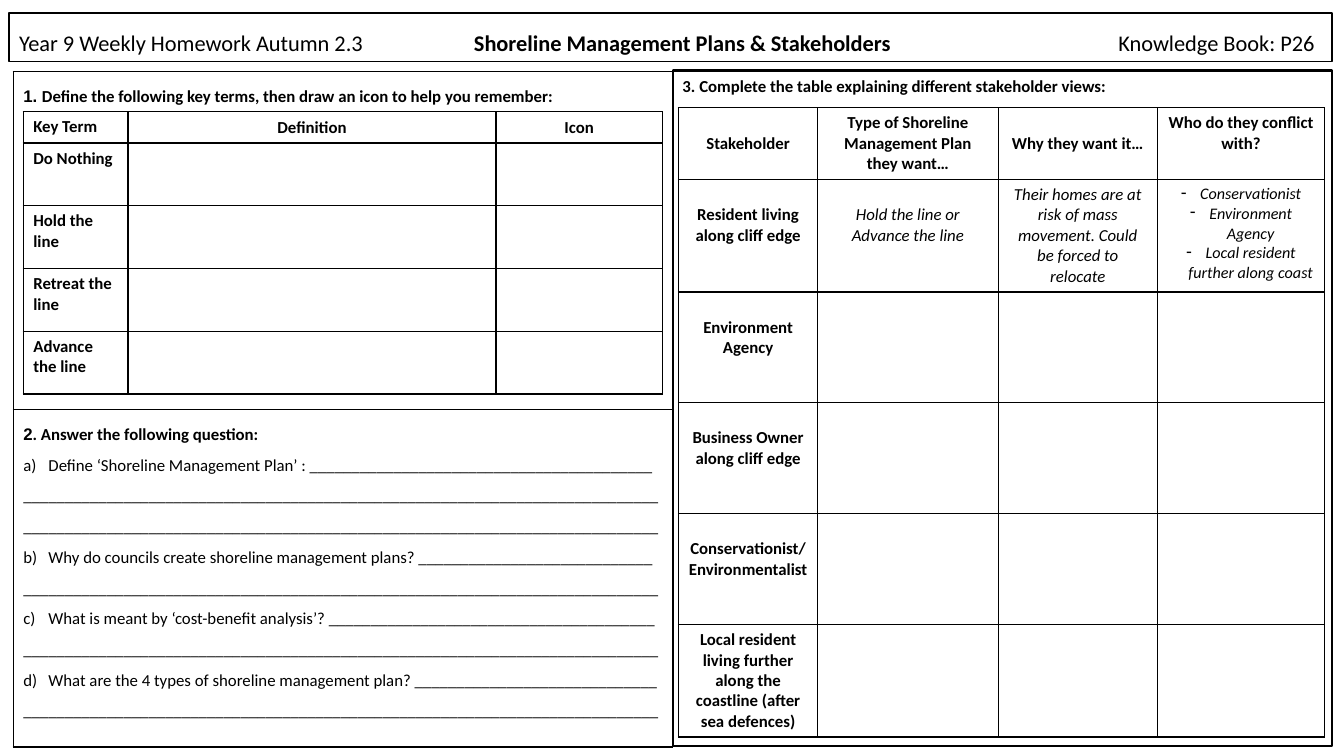
"""Build a homework slide about shoreline management plans and stakeholders."""
from dataclasses import dataclass

from lxml import etree
from pptx import Presentation
from pptx.dml.color import RGBColor
from pptx.enum.shapes import MSO_SHAPE
from pptx.enum.text import MSO_ANCHOR, PP_ALIGN
from pptx.oxml.ns import qn
from pptx.util import Inches, Pt

RECT = MSO_SHAPE.RECTANGLE
TOP, MIDDLE, BOTTOM = MSO_ANCHOR.TOP, MSO_ANCHOR.MIDDLE, MSO_ANCHOR.BOTTOM
LEFT, CENTER = PP_ALIGN.LEFT, PP_ALIGN.CENTER
BLACK, WHITE = "000000", "FFFFFF"
WIDTH, HEIGHT = Inches(13.33), Inches(7.5)
ANSWER_LINE = "_" * 76


@dataclass
class Run:
    text: str
    bold: bool = True
    italic: bool = False
    size: float = 12
    font: str = "Calibri"


@dataclass
class Para:
    runs: list[Run]
    align: PP_ALIGN = LEFT
    spacing: float = 1
    bullet: str = ""
    start: int = 0
    indent: float = 0


@dataclass
class Cell:
    paras: list[Para]
    anchor: MSO_ANCHOR = TOP
    lead: float = 0.05


@dataclass
class Box:
    """Position and size as percentages of the slide."""
    left: float
    top: float
    width: float
    height: float


@dataclass
class Grid:
    """Table whose columns and rows are percentages of the slide."""
    left: float
    top: float
    cols: list[float]
    rows: list[float]
    cells: list[list[Cell]]


def x(percent: float) -> int:
    return int(WIDTH * percent / 100)


def y(percent: float) -> int:
    return int(HEIGHT * percent / 100)


def rgb(value: str) -> RGBColor:
    return RGBColor.from_string(value)


def add_bullet(p, para: Para) -> None:
    pPr = p._p.get_or_add_pPr()
    pPr.set("marL", str(Inches(para.indent)))
    pPr.set("indent", str(-Inches(para.indent)))
    if para.start:
        etree.SubElement(pPr, qn("a:buAutoNum"), type="alphaLcParenR", startAt=str(para.start))
    else:
        etree.SubElement(pPr, qn("a:buChar"), char=para.bullet)


def write(tf, paras: list[Para]) -> None:
    for i, para in enumerate(paras):
        p = tf.add_paragraph() if i else tf.paragraphs[0]
        p.alignment = para.align
        p.line_spacing = para.spacing
        if para.indent:
            add_bullet(p, para)
        for run in para.runs:
            r = p.add_run()
            r.text = run.text
            r.font.name, r.font.size = run.font, Pt(run.size)
            r.font.bold, r.font.italic = run.bold, run.italic
            r.font.color.rgb = rgb(BLACK)


def add_box(s, box: Box, line: float, anchor: MSO_ANCHOR, paras: list[Para]):
    sp = s.shapes.add_shape(RECT, x(box.left), y(box.top), x(box.width), y(box.height))
    sp.shadow.inherit = False
    sp.fill.solid()
    sp.fill.fore_color.rgb = rgb(WHITE)
    sp.line.color.rgb = rgb(BLACK)
    sp.line.width = Pt(line)
    tf = sp.text_frame
    tf.word_wrap = True
    tf.vertical_anchor = anchor
    write(tf, paras)
    return sp


def add_tabs(p, stops: list[tuple[str, float]]) -> None:
    tabs = etree.SubElement(p._p.get_or_add_pPr(), qn("a:tabLst"))
    for align, percent in stops:
        etree.SubElement(tabs, qn("a:tab"), pos=str(x(percent)), algn=align)


def add_borders(cell) -> None:
    tcPr = cell._tc.get_or_add_tcPr()
    for i, side in enumerate(("lnL", "lnR", "lnT", "lnB")):
        ln = etree.Element(qn(f"a:{side}"), w=str(Pt(1)))
        fill = etree.SubElement(ln, qn("a:solidFill"))
        etree.SubElement(fill, qn("a:srgbClr"), val=BLACK)
        tcPr.insert(i, ln)


def add_grid(s, grid: Grid) -> None:
    table = s.shapes.add_table(len(grid.rows), len(grid.cols), x(grid.left), y(grid.top),
                               x(sum(grid.cols)), y(sum(grid.rows))).table
    table.first_row = table.horz_banding = False
    for column, width in zip(table.columns, grid.cols):
        column.width = x(width)
    for row, height, contents in zip(table.rows, grid.rows, grid.cells):
        row.height = y(height)
        for cell, content in zip(row.cells, contents):
            cell.fill.background()
            cell.vertical_anchor = content.anchor
            cell.margin_top = Inches(content.lead)
            write(cell.text_frame, content.paras)
            add_borders(cell)


def label(text: str, align: PP_ALIGN = LEFT, anchor: MSO_ANCHOR = TOP) -> Cell:
    return Cell([Para([Run(text)], align)], anchor)


def centred(text: str, lowered: bool = True, example: bool = False) -> Cell:
    run = Run(text, bold=not example, italic=example)
    return Cell([Para([run], CENTER)], lead=0.25 if lowered else 0.05)


def blanks(count: int) -> list[Cell]:
    return [Cell([]) for _ in range(count)]


def heading(number: str, text: str) -> Para:
    return Para([Run(number, font="Arial"), Run(text)], spacing=1.5)


def question(start: int, text: str, blank: int, lines: int = 1) -> list[Para]:
    return [Para([Run(f"{text} {'_' * blank}", bold=False)], spacing=1.5, start=start, indent=0.25),
            Para([Run(ANSWER_LINE * lines, bold=False)], spacing=1.5)]


QUESTIONS = [
    *question(1, "Define ‘Shoreline Management Plan’ :", 41, lines=2),
    *question(2, "Why do councils create shoreline management plans?", 28),
    *question(3, "What is meant by ‘cost-benefit analysis’?", 39),
    *question(4, "What are the 4 types of shoreline management plan?", 29),
]
TASKS = Grid(0.98, 9.47, [49.06], [44.67] * 2, [
    [Cell([heading("1. ", "Define the following key terms, then draw an icon to help you remember:")])],
    [Cell([heading("2", ". Answer the following question:"), *QUESTIONS])],
])
TERMS = ["Do Nothing", "Hold the line", "Retreat the line", "Advance the line"]
KEY_TERMS = Grid(1.73, 14.8, [7.8, 27.38, 12.38], [4.13] + [8.3] * 4, [
    [label("Key Term"), label("Definition", CENTER, MIDDLE), label("Icon", CENTER, MIDDLE)],
    *([label(term)] + blanks(2) for term in TERMS),
])
CONFLICTS = ["Conservationist", "Environment Agency", "Local resident further along coast"]
STAKEHOLDERS = Grid(50.49, 14.27, [10.35, 13.43, 11.85, 12.45], [9.33] + [14.67] * 5, [
    [centred("Stakeholder"),
     centred("Type of Shoreline Management Plan they want…", lowered=False),
     centred("Why they want it…"),
     centred("Who do they conflict with?", lowered=False)],
    [centred("Resident living along cliff edge"),
     centred("Hold the line or Advance the line", example=True),
     centred("Their homes are at risk of mass movement. Could be forced to relocate", False, True),
     Cell([Para([Run(name, False, True, 11.5)], CENTER, bullet="-", indent=0.19)
           for name in CONFLICTS])],
    [centred("Environment Agency")] + blanks(3),
    [centred("Business Owner along cliff edge")] + blanks(3),
    [centred("Conservationist/ Environmentalist")] + blanks(3),
    [centred("Local resident living further along the coastline (after sea defences)", lowered=False)]
    + blanks(3),
])
TITLE = Para([Run("Year 9 Weekly Homework Autumn 2.3\t", False, size=16),
              Run("Shoreline Management Plans & Stakeholders\t", size=16),
              Run("Knowledge Book: P26", False, size=16)], spacing=0.9)
VIEWS = Para([Run("3. Complete the table explaining different stakeholder views:")])


def main() -> None:
    prs = Presentation()
    prs.slide_width, prs.slide_height = WIDTH, HEIGHT
    s = prs.slides.add_slide(prs.slide_layouts[6])
    header = add_box(s, Box(0.68, 1.73, 98.42, 6.4), 1, BOTTOM, [TITLE])
    add_tabs(header.text_frame.paragraphs[0], [("ctr", 49.36), ("r", 96.4)])
    add_grid(s, TASKS)
    add_grid(s, KEY_TERMS)
    add_box(s, Box(50.04, 9.33, 49.06, 89.33), 1.5, TOP, [VIEWS])
    add_grid(s, STAKEHOLDERS)
    prs.save("out.pptx")


if __name__ == "__main__":
    main()
